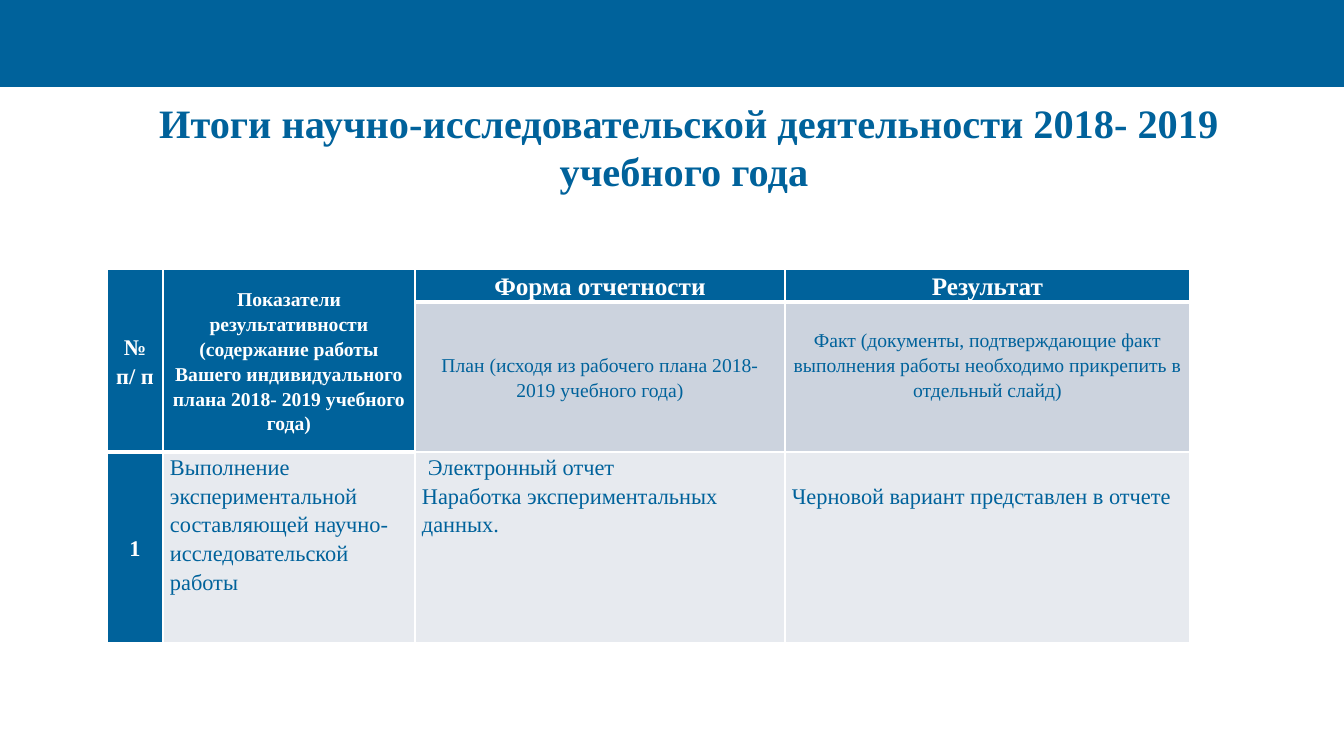
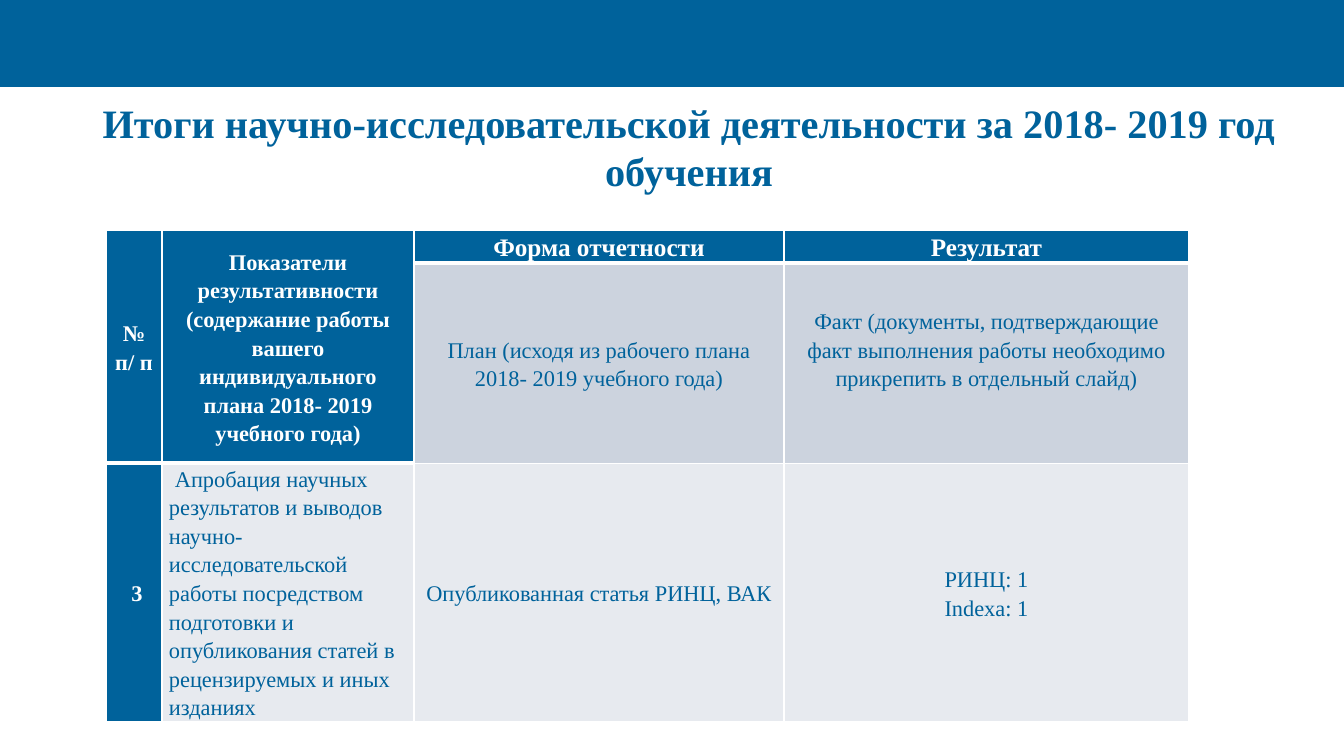
import pptx
import pptx.util
import pptx.dml.color
import pptx.enum.shapes
import pptx.enum.text
import pptx.oxml
import pptx.oxml.ns

# Shared style
COLORS = {"blue": "00629B", "white": "FFFFFF", "plan": "CCD3DE", "entry": "E7EAEF"}
FONT = "Times New Roman"
SCALE = 914400 / 100.8
PAGE_SIZE = (1344, 756)
BAND_HEIGHT = 87
BAND_ID = 20
TITLE_BOX = (84, 101, 1210, 91)
TITLE_POINTS = 28.8
COLUMNS = (56, 252, 370, 405)
CELL_MARGIN = 7
LINE = 1.15
CENTER = pptx.enum.text.PP_ALIGN.CENTER
LEFT = pptx.enum.text.PP_ALIGN.LEFT
MIDDLE = pptx.enum.text.MSO_ANCHOR.MIDDLE
TOP = pptx.enum.text.MSO_ANCHOR.TOP

# Cell kinds: fill, text colour, bold
KINDS = {"head": ("blue", "white", True),
         "plan": ("plan", "blue", False),
         "entry": ("entry", "blue", False)}

# Content shared by both tables
NUMBER_HEAD = "№ п/ п"
REPORT_HEAD = "Форма отчетности"
RESULT_HEAD = "Результат"
PLAN = "План (исходя из рабочего плана 2018- 2019 учебного года)"
FACT = ("Факт (документы, подтверждающие факт выполнения работы "
        "необходимо прикрепить в отдельный слайд)")
MEASURES = ("Показатели результативности\n(содержание работы {} "
            "индивидуального плана 2018- 2019 учебного года)")

# Content of each page; a number or entry is text plus its own settings
PAGES = [
    {"title": "Итоги научно-исследовательской деятельности 2018- 2019 учебного года ",
     "at": (107, 269), "rows": (33, 150, 191),
     "whose": "Вашего", "head_points": 14, "fact_gap": 25, "number": ("1", {}),
     "entries": [
         ("Выполнение экспериментальной составляющей научно-исследовательской работы", {}),
         ("Электронный отчет\nНаработка экспериментальных данных.", {"indent": 6}),
         ("Черновой вариант представлен в отчете", {"top": 29})]},
    {"title": "Итоги научно-исследовательской деятельности за 2018- 2019 год обучения",
     "at": (106, 230), "rows": (33, 200, 258),
     "whose": "вашего", "head_points": 16, "fact_gap": 29, "number": ("3", {"indent": 6}),
     "entries": [
         ("Апробация научных результатов и выводов научно-исследовательской работы "
          "посредством подготовки и опубликования статей в рецензируемых и иных изданиях",
          {"indent": 6}),
         ("Опубликованная статья РИНЦ, ВАК", {"align": CENTER, "anchor": MIDDLE}),
         ("РИНЦ: 1\nIndexa: 1", {"align": CENTER, "anchor": MIDDLE})]},
]


def px(length):
    return pptx.util.Emu(round(length * SCALE))


def rgb(name):
    return pptx.dml.color.RGBColor.from_string(COLORS[name])


def format_text(frame, points, color, bold, align, spacing):
    for para in frame.paragraphs:
        para.alignment = align
        para.line_spacing = spacing
        for span in para.runs:
            span.font.name = FONT
            span.font.size = pptx.util.Pt(points)
            span.font.bold = bold
            span.font.color.rgb = rgb(color)


def set_borders(cell, bottom):
    properties = cell._tc.get_or_add_tcPr()
    sides = (("lnL", 1), ("lnR", 1), ("lnT", 1), ("lnB", bottom))
    for position, (side, points) in enumerate(sides):
        properties.insert(position, pptx.oxml.parse_xml(
            f'<a:{side} {pptx.oxml.ns.nsdecls("a")} w="{points * 12700}">'
            f'<a:solidFill><a:srgbClr val="{COLORS["white"]}"/></a:solidFill></a:{side}>'))


def fill_cell(cell, text, kind, points=16, align=CENTER, anchor=MIDDLE,
              top=0, bottom=0, indent=0):
    fill, color, bold = KINDS[kind]
    cell.fill.solid()
    cell.fill.fore_color.rgb = rgb(fill)
    cell.margin_left = cell.margin_right = px(CELL_MARGIN)
    cell.margin_top, cell.margin_bottom = px(top), px(bottom)
    cell.vertical_anchor = anchor
    cell.text_frame.text = text
    format_text(cell.text_frame, points, color, bold, align, LINE)
    if indent:
        first = cell.text_frame.paragraphs[0]._p.get_or_add_pPr()
        first.set("marL", "0")
        first.set("indent", str(px(indent)))


def add_results(page, content):
    rows = content["rows"]
    frame = page.shapes.add_table(len(rows), len(COLUMNS), *map(px, content["at"]),
                                  px(sum(COLUMNS)), px(sum(rows)))
    table = frame.table
    table.first_row = table.horz_banding = False
    for column, width in zip(table.columns, COLUMNS):
        column.width = px(width)
    for row, height in zip(table.rows, rows):
        row.height = px(height)

    # Header rows
    points = content["head_points"]
    for column in (0, 1):
        table.cell(0, column).merge(table.cell(1, column))
    fill_cell(table.cell(0, 0), NUMBER_HEAD, "head")
    fill_cell(table.cell(0, 1), MEASURES.format(content["whose"]), "head", points)
    fill_cell(table.cell(0, 2), REPORT_HEAD, "head", 18, anchor=TOP)
    fill_cell(table.cell(0, 3), RESULT_HEAD, "head", 18, anchor=TOP)
    fill_cell(table.cell(1, 2), PLAN, "plan", points)
    fill_cell(table.cell(1, 3), FACT, "plan", points, bottom=content["fact_gap"])

    # Numbered row
    number, number_settings = content["number"]
    fill_cell(table.cell(2, 0), number, "head", **number_settings)
    for column, (text, settings) in enumerate(content["entries"], 1):
        fill_cell(table.cell(2, column), text, "entry",
                  **{"align": LEFT, "anchor": TOP, **settings})

    # Borders: thick under the header cells
    for row in range(len(rows)):
        for column in range(len(COLUMNS)):
            under_head = row == 0 or (row == 1 and column < 2)
            set_borders(table.cell(row, column), 3 if under_head else 1)


def add_master_band(deck, page):
    band = page.shapes.add_shape(pptx.enum.shapes.MSO_SHAPE.RECTANGLE,
                                 0, 0, px(PAGE_SIZE[0]), px(BAND_HEIGHT))
    band.shadow.inherit = False
    band.fill.solid()
    band.fill.fore_color.rgb = rgb("blue")
    band.line.fill.background()
    band._element.nvSpPr.cNvPr.set("id", str(BAND_ID))
    deck.slide_master.shapes.element.insert(2, band._element)


def prepare_layout(layout):
    # Keep only the title, at its shared place
    for holder in list(layout.placeholders)[1:]:
        layout.shapes.element.remove(holder._element)
    heading = layout.placeholders[0]
    heading.left, heading.top, heading.width, heading.height = map(px, TITLE_BOX)


def main():
    deck = pptx.Presentation()
    deck.slide_width, deck.slide_height = map(px, PAGE_SIZE)
    layout = deck.slide_layouts[5]
    prepare_layout(layout)

    for number, content in enumerate(PAGES):
        page = deck.slides.add_slide(layout)
        if number == 0:
            add_master_band(deck, page)
        frame = page.shapes.title.text_frame
        frame.text = content["title"]
        frame.word_wrap = True
        frame.auto_size = pptx.enum.text.MSO_AUTO_SIZE.NONE
        frame.vertical_anchor = MIDDLE
        format_text(frame, TITLE_POINTS, "blue", True, CENTER, 1.0)
        add_results(page, content)

    deck.save("out.pptx")


if __name__ == "__main__":
    main()
